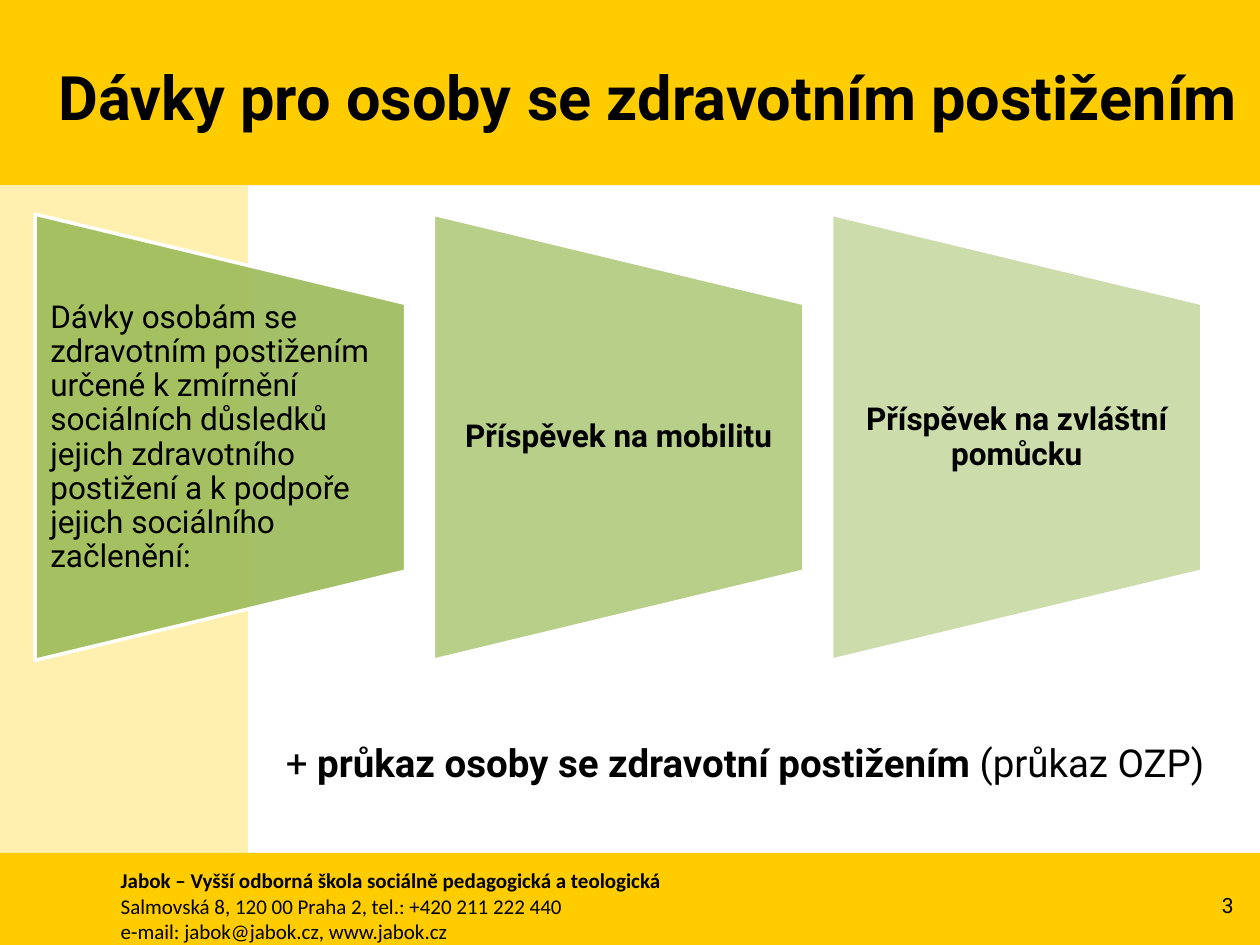
import pptx
import pptx.util
import pptx.dml.color
import pptx.enum.shapes
import pptx.enum.text
import lxml.etree

deck = pptx.Presentation()
deck.slide_width = pptx.util.Inches(10)
deck.slide_height = pptx.util.Inches(7.5)
page = deck.slides.add_slide(deck.slide_layouts[6])
column = deck.slide_width / 100
row = deck.slide_height / 75
shapes = pptx.enum.shapes.MSO_SHAPE
align = pptx.enum.text.PP_ALIGN
anchor = pptx.enum.text.MSO_ANCHOR


def add_block(kind, area, color, angle=0):
    left, top, width, height = area
    block = page.shapes.add_shape(kind, int(left * column), int(top * row),
                                  int(width * column), int(height * row))
    block.shadow.inherit = False
    block.rotation = angle
    block.fill.solid()
    block.fill.fore_color.rgb = pptx.dml.color.RGBColor.from_string(color)
    block.line.fill.background()
    return block


def add_text(area, lines, font, frame=None, layout=None):
    left, top, width, height = area
    box = page.shapes.add_textbox(int(left * column), int(top * row),
                                  int(width * column), int(height * row))
    box.text_frame.word_wrap = True
    for name, value in (frame or {}).items():
        setattr(box.text_frame, name, value)
    for index, line in enumerate(lines):
        para = box.text_frame.paragraphs[0] if index == 0 else box.text_frame.add_paragraph()
        for name, value in (layout or {}).items():
            setattr(para, name, value)
        for words, bold in line:
            span = para.add_run()
            span.text = words
            for name, value in {**font, "bold": bold}.items():
                setattr(span.font, name, value)
            span.font.color.rgb = pptx.dml.color.RGBColor.from_string("000000")


for area, color in [
    ((0, 0, 100, 14.7), "FFCC00"),
    ((0, 14.7, 19.7, 53), "FFF0AF"),
    ((0, 67.7, 100, 7.3), "FFCC00"),
]:
    add_block(shapes.RECTANGLE, area, color)

middle = {"vertical_anchor": anchor.MIDDLE}
small = pptx.util.Pt(12)
add_text((8.6, 68.4, 81.9, 6.6), [
    [("Jabok – Vyšší odborná škola sociálně pedagogická a teologická", True)],
    [("Salmovská 8, 120 00 Praha 2, tel.: +420 211 222 440", False)],
    [("e-mail: jabok@jabok.cz, www.jabok.cz", False)],
], {"name": "Calibri", "size": small})
add_text((92.6, 69.8, 6.3, 4), [[("3", False)]],
         {"name": "Roboto", "size": small}, middle, {"alignment": align.RIGHT})
add_text((3.4, 4.4, 96.1, 6.5), [[("Dávky pro osoby se zdravotním postižením", True)]],
         {"name": "Roboto", "size": pptx.util.Pt(35)}, middle, {"alignment": align.CENTER})

card_frame = {**middle, "margin_left": pptx.util.Inches(0.12),
              "margin_right": pptx.util.Inches(0.12), "margin_top": 0, "margin_bottom": 0}
cards = [
    ("Dávky osobám se zdravotním postižením určené k zmírnění sociálních důsledků "
     "jejich zdravotního postižení a k podpoře jejich sociálního začlenění:",
     False, align.LEFT, 90),
    ("Příspěvek na mobilitu", True, align.CENTER, 70),
    ("Příspěvek na zvláštní pomůcku", True, align.CENTER, 50),
]
for index, (words, bold, alignment, opacity) in enumerate(cards):
    shift = index * 31.6
    card = add_block(shapes.FLOWCHART_MANUAL_OPERATION,
                     (shift - 0.2, 20, 35.4, 29.4), "9BBB59", 270)
    tint = card.fill._xPr.find(".//" + pptx.oxml.ns.qn("a:srgbClr"))
    lxml.etree.SubElement(tint, pptx.oxml.ns.qn("a:alpha"), val=str(opacity * 1000))
    card.line.color.rgb = pptx.dml.color.RGBColor.from_string("FFFFFF")
    card.line.width = pptx.util.Pt(2)
    add_text((shift + 2.8, 24.1, 29.4, 21.3), [[(words, bold)]],
             {"name": "Roboto", "size": pptx.util.Pt(18)}, card_frame,
             {"alignment": alignment, "line_spacing": 0.9})

add_text((21.7, 58.2, 78.3, 4.7), [[
    ("+ ", False),
    ("průkaz osoby se zdravotní postižením", True),
    (" (průkaz OZP)", False),
]], {"name": "Roboto", "size": pptx.util.Pt(22)})

deck.save("out.pptx")
